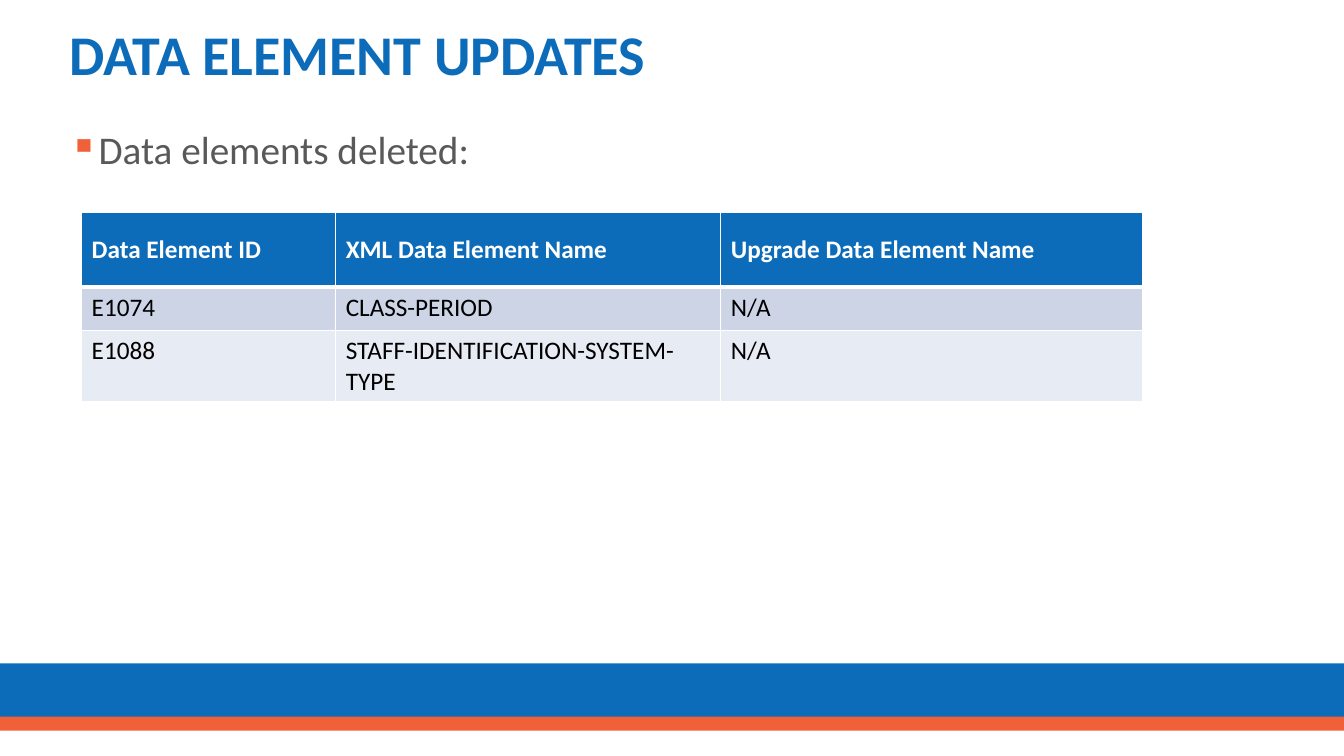
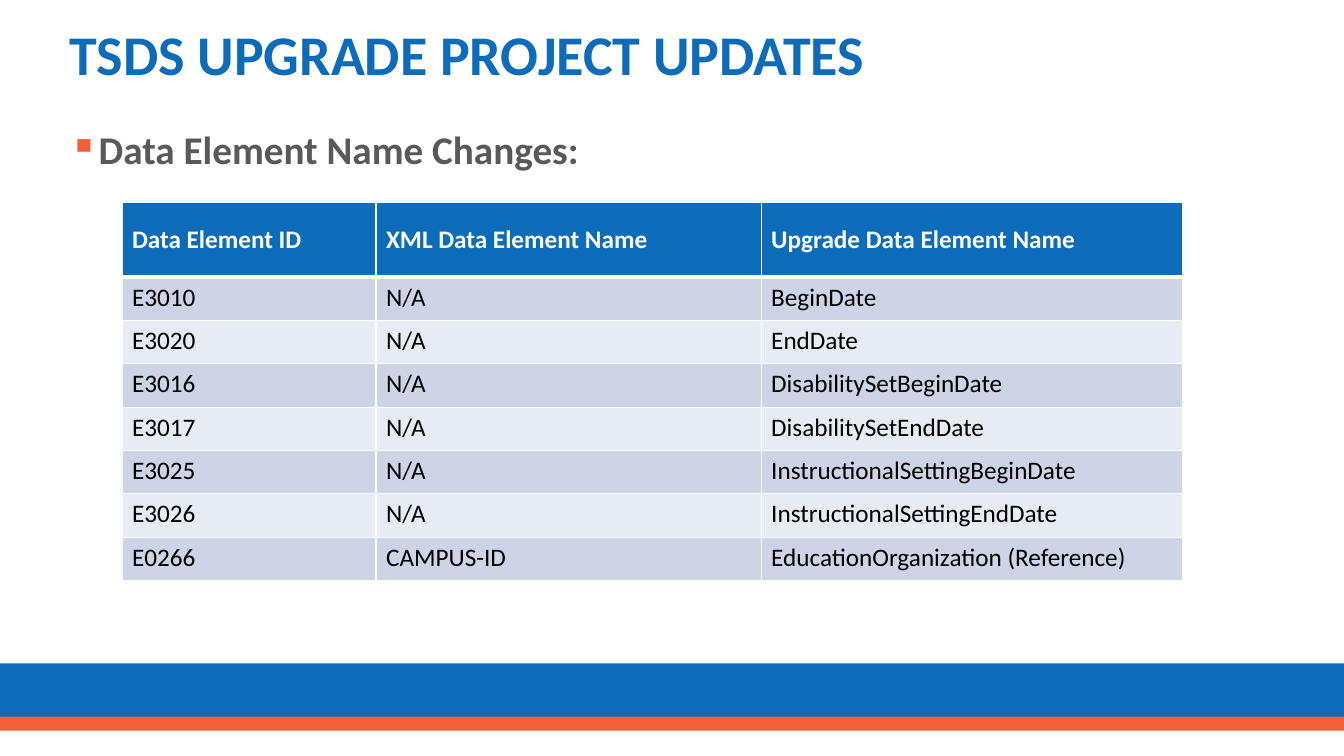
from lxml.etree import SubElement
from pptx import Presentation
from pptx.dml.color import RGBColor
from pptx.enum.shapes import MSO_SHAPE
from pptx.enum.text import MSO_ANCHOR
from pptx.oxml.ns import qn
from pptx.util import Emu, Inches, Pt

BLUE = RGBColor(0x0D, 0x6C, 0xB9)
ORANGE = RGBColor(0xF1, 0x60, 0x38)
GREY = RGBColor(0x59, 0x59, 0x59)
WHITE = RGBColor(0xFF, 0xFF, 0xFF)
BLACK = RGBColor(0x00, 0x00, 0x00)
ROW_TINTS = (RGBColor(0xCC, 0xD4, 0xE6), RGBColor(0xE7, 0xEB, 0xF3))

SLIDE_W, SLIDE_H = 13.33, 7.5
MARGIN = 0.59
FONT = "Calibri"
# Footer bands: top, height, colour
BANDS = ((6.58, 0.58, BLUE), (7.11, 0.14, ORANGE))

COLUMN_WIDTHS = (2.52, 3.82, 4.18)
HEADER_H, ROW_H = 0.74, 0.43
HEADINGS = ("Data Element ID", "XML Data Element Name", "Upgrade Data Element Name")

SLIDES = (
    dict(title="DATA ELEMENT UPDATES", lead="Data elements deleted:", lead_bold=False,
         table_at=(0.81, 2.11),
         rows=(("E1074", "CLASS-PERIOD", "N/A"),
               ("E1088", "STAFF-IDENTIFICATION-SYSTEM-TYPE", "N/A"))),
    dict(title="TSDS UPGRADE PROJECT UPDATES", lead="Data Element Name Changes:", lead_bold=True,
         table_at=(1.21, 2.01),
         rows=(("E3010", "N/A", "BeginDate"),
               ("E3020", "N/A", "EndDate"),
               ("E3016", "N/A", "DisabilitySetBeginDate"),
               ("E3017", "N/A", "DisabilitySetEndDate"),
               ("E3025", "N/A", "InstructionalSettingBeginDate"),
               ("E3026", "N/A", "InstructionalSettingEndDate"),
               ("E0266", "CAMPUS-ID", "EducationOrganization (Reference)"))),
)


def inches(*lengths):
    return [Inches(length) for length in lengths]


def write(paragraph, text, size, color, bold):
    run = paragraph.add_run()
    run.text = text
    run.font.color.rgb = color
    for attribute, value in dict(name=FONT, size=Pt(size), bold=bold).items():
        setattr(run.font, attribute, value)


def add_text_frame(slide, box):
    frame = slide.shapes.add_textbox(*inches(*box)).text_frame
    frame.word_wrap = True
    frame.paragraphs[0].line_spacing = 0.9
    return frame


def add_bands(slide):
    for top, height, color in BANDS:
        band = slide.shapes.add_shape(MSO_SHAPE.RECTANGLE, *inches(0, top, SLIDE_W, height))
        band.shadow.inherit = False
        band.fill.solid()
        band.fill.fore_color.rgb = color
        band.line.fill.background()


def add_title(slide, text, box):
    frame = add_text_frame(slide, box)
    frame.vertical_anchor = MSO_ANCHOR.MIDDLE
    write(frame.paragraphs[0], text, 40, BLUE, True)


def add_lead(slide, text, bold, box):
    paragraph = add_text_frame(slide, box).paragraphs[0]
    # Hanging square bullet
    props = paragraph._p.get_or_add_pPr()
    props.set("marL", str(Inches(0.25)))
    props.set("indent", str(-Inches(0.25)))
    bullet_color = SubElement(props, qn("a:buClr"))
    SubElement(bullet_color, qn("a:srgbClr"), val=str(ORANGE))
    SubElement(props, qn("a:buChar"), char="▪")
    write(paragraph, text, 28, GREY, bold)


def set_borders(cell, top, bottom):
    props = cell._tc.get_or_add_tcPr()
    for side, width in dict(L=1, R=1, T=top, B=bottom).items():
        line = SubElement(props, qn(f"a:ln{side}"), w=str(Pt(width)))
        line_fill = SubElement(line, qn("a:solidFill"))
        SubElement(line_fill, qn("a:srgbClr"), val=str(WHITE))


def add_element_table(slide, rows, left, top):
    height = HEADER_H + ROW_H * len(rows)
    table = slide.shapes.add_table(
        len(rows) + 1, len(HEADINGS),
        *inches(left, top, sum(COLUMN_WIDTHS), height)).table
    table.horz_banding = False
    for column, width in zip(table.columns, COLUMN_WIDTHS):
        column.width = Inches(width)
    for r, values in enumerate((HEADINGS, *rows)):
        header = r == 0
        table.rows[r].height = Inches(HEADER_H if header else ROW_H)
        for c, value in enumerate(values):
            cell = table.cell(r, c)
            # A thick rule separates the header from the first row
            set_borders(cell, top=3 if r == 1 else 1, bottom=3 if header else 1)
            cell.fill.solid()
            cell.fill.fore_color.rgb = BLUE if header else ROW_TINTS[(r - 1) % 2]
            cell.vertical_anchor = MSO_ANCHOR.MIDDLE if header else MSO_ANCHOR.TOP
            write(cell.text_frame.paragraphs[0], value, 18, WHITE if header else BLACK, header)


def add_update_slide(deck, title, lead, lead_bold, table_at, rows):
    slide = deck.slides.add_slide(deck.slide_layouts[6])
    add_bands(slide)
    add_title(slide, title, (MARGIN, 0.16, 12.16, 0.82))
    add_lead(slide, lead, lead_bold, (MARGIN, 1.25, 12.33, 4.76))
    add_element_table(slide, rows, *table_at)


def main():
    deck = Presentation()
    deck.slide_width, deck.slide_height = inches(SLIDE_W, SLIDE_H)
    for content in SLIDES:
        add_update_slide(deck, **content)
    deck.save("out.pptx")


if __name__ == "__main__":
    main()
